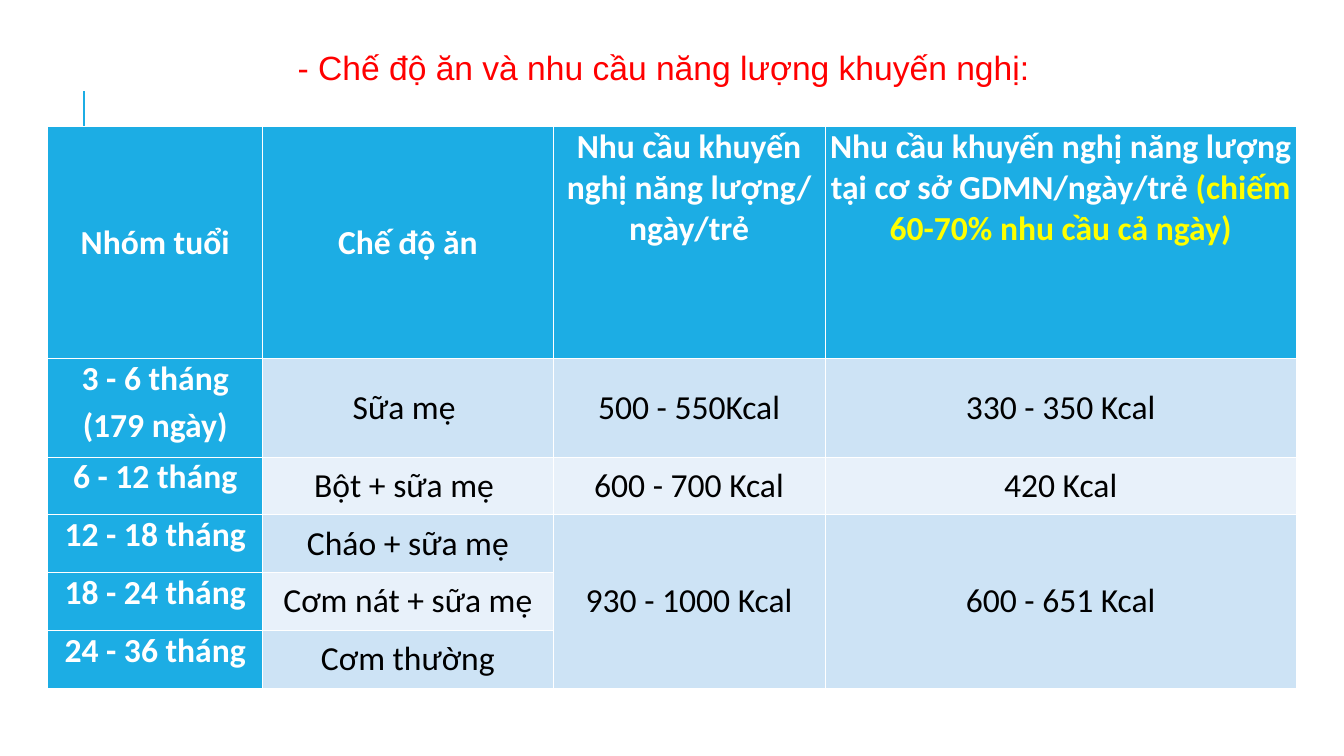
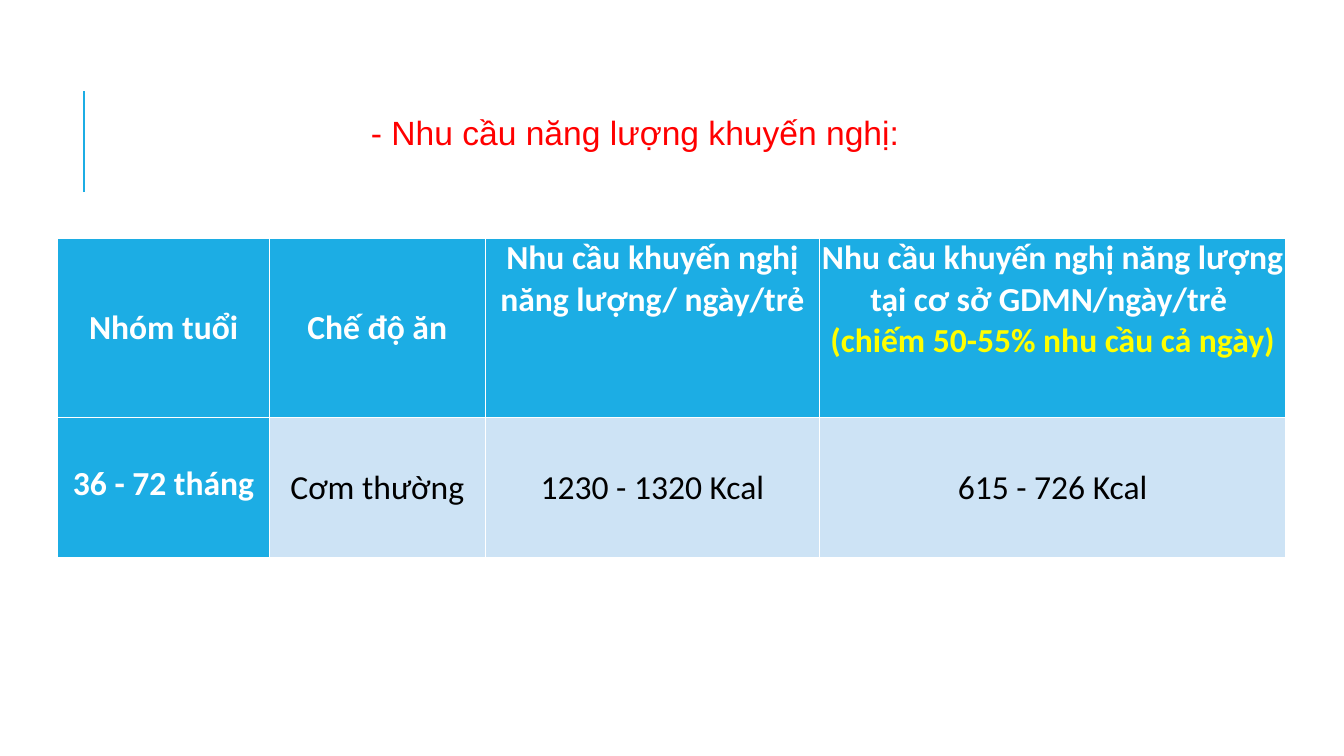
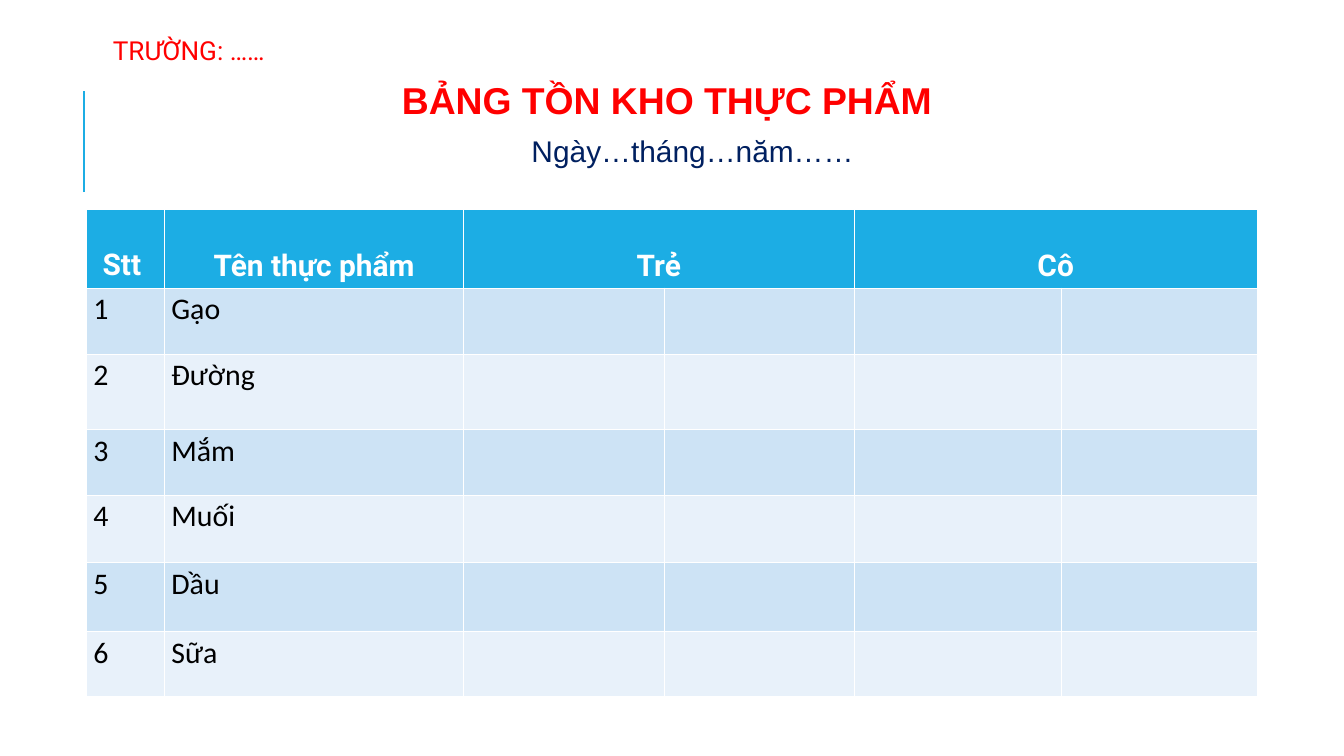
from pptx import Presentation, util as u
from pptx.dml.color import RGBColor
from pptx.enum import shapes, text
from lxml import etree

COLORS = {"blue": "1CADE4", "band": "CDE3F5", "pale": "E8F1FA", "white": "FFFFFF",
          "black": "000000", "red": "FF0000", "navy": "002060", "yellow": "FFFF00"}
GRID_COLUMNS, GRID_ROWS = 20, 11.25
CELL = u.Inches(1)
TITLE_ONLY = 5
A_NS = "http://schemas.openxmlformats.org/drawingml/2006/main"
TITLE_INDENT = 0.75
TOP, MIDDLE = text.MSO_ANCHOR.TOP, text.MSO_ANCHOR.MIDDLE
LEFT, CENTER, JUSTIFY = text.PP_ALIGN.LEFT, text.PP_ALIGN.CENTER, text.PP_ALIGN.JUSTIFY


def grid(*counts):
    return [round(count * CELL) for count in counts]


def color(name):
    return RGBColor.from_string(COLORS[name])


def set_font(font, name, size, tint, bold=False):
    font.name, font.size, font.bold = name, u.Pt(size), bold
    font.color.rgb = color(tint)


def add_accent_line(page):
    line = page.shapes.add_connector(shapes.MSO_CONNECTOR.STRAIGHT, *grid(1.25, 2.86, 1.25, 1.36))
    line.line.color.rgb = color("blue")
    line.line.width = u.Pt(1.5)
    etree.SubElement(line._element.spPr, f"{{{A_NS}}}effectLst")


def add_page(deck):
    page = deck.slides.add_slide(deck.slide_layouts[TITLE_ONLY])
    add_accent_line(page)
    return page


def add_title_line(para, words, font, size, tint, bold=False, align=JUSTIFY, indent=TITLE_INDENT):
    para.text = words
    para.alignment = align
    para.space_before = para.space_after = u.Pt(6)
    para._p.get_or_add_pPr().set("indent", str(grid(indent)[0]))
    set_font(para.font, font, size, tint, bold)


def place_title(page, spot, lines):
    title = page.shapes.title
    title.left, title.top, title.width, title.height = grid(*spot)
    frame = title.text_frame
    frame.word_wrap = True
    frame.vertical_anchor = TOP
    frame.auto_size = text.MSO_AUTO_SIZE.SHAPE_TO_FIT_TEXT
    for index, line in enumerate(lines):
        para = frame.add_paragraph() if index else frame.paragraphs[0]
        add_title_line(para, **line)


def add_table(page, left, top, widths, heights):
    table = page.shapes.add_table(len(heights), len(widths),
                                  *grid(left, top, sum(widths), sum(heights))).table
    for column, width in zip(table.columns, grid(*widths)):
        column.width = width
    for row, height in zip(table.rows, grid(*heights)):
        row.height = height
    return table


def paint_cells(table, blue_column):
    for row in range(len(table.rows)):
        for column in range(len(table.columns)):
            fill = table.cell(row, column).fill
            fill.solid()
            is_head = row == 0 or (blue_column and column == 0)
            fill.fore_color.rgb = color("blue" if is_head else "band" if row % 2 else "pale")


def write_cell(cell, words, font, size, head, align=CENTER, anchor=TOP, spacing=None):
    cell.vertical_anchor = anchor
    for index, line in enumerate(words.split("\n")):
        para = cell.text_frame.add_paragraph() if index else cell.text_frame.paragraphs[0]
        para.alignment = align
        if spacing:
            para.line_spacing = spacing
        set_font(para.font, font, size, "white" if head else "black", head)
        for part, piece in enumerate(line.split("*")):
            if piece:
                span = para.add_run()
                span.text = piece
                if part:
                    span.font.color.rgb = color("yellow")


def clear_margins(cell):
    cell.margin_left = cell.margin_top = cell.margin_right = cell.margin_bottom = 0


def add_energy_table(page, left, top, widths, heights, rows):
    table = add_table(page, left, top, widths, heights)
    paint_cells(table, blue_column=True)
    for row, entries in enumerate(rows):
        for column, words in enumerate(entries):
            cell = table.cell(row, column)
            clear_margins(cell)
            centred = column < 2 if row == 0 else column > 0
            write_cell(cell, words, "Calibri", 36, row == 0 or column == 0,
                       anchor=MIDDLE if centred else TOP)
    return table


def build_toddler_page(deck):
    page = add_page(deck)
    place_title(page, (3.58, 0.65, 14.08, 0.71), [
        dict(words="- Chế độ ăn và nhu cầu năng lượng khuyến nghị:", font="Arial", size=36, tint="red")])
    table = add_energy_table(page, 0.71, 1.88, [3.2, 4.32, 4.05, 7.01], [3.46, 1.46] + [0.86] * 4, [
        ["Nhóm tuổi", "Chế độ ăn", "Nhu cầu khuyến nghị năng lượng/ ngày/trẻ",
         "Nhu cầu khuyến nghị năng lượng tại cơ sở GDMN/ngày/trẻ *(chiếm 60-70% nhu cầu cả ngày)"],
        ["3 - 6 tháng\n(179 ngày)", "Sữa mẹ ", "500 - 550Kcal", "330 - 350 Kcal"],
        ["6 - 12 tháng", "Bột + sữa mẹ ", "600 - 700 Kcal", "420 Kcal"],
        ["12 - 18 tháng", "Cháo + sữa mẹ", "930 - 1000 Kcal", "600 - 651 Kcal"],
        ["18 - 24 tháng", "Cơm nát + sữa mẹ"],
        ["24 - 36 tháng", "Cơm thường"]])
    table.cell(1, 0).text_frame.paragraphs[0].space_after = u.Pt(6)
    for column in (2, 3):
        table.cell(3, column).merge(table.cell(5, column))


def build_preschool_page(deck):
    page = add_page(deck)
    place_title(page, (4.67, 1.62, 14.08, 0.71), [
        dict(words="- Nhu cầu năng lượng khuyến nghị:", font="Arial", size=36, tint="red")])
    table = add_energy_table(page, 0.86, 3.54, [3.15, 3.21, 4.98, 6.93], [2.67, 2.09], [
        ["Nhóm tuổi", "Chế độ ăn", "Nhu cầu khuyến nghị năng lượng/ ngày/trẻ",
         "Nhu cầu khuyến nghị năng lượng tại cơ sở GDMN/ngày/trẻ \n*(chiếm 50-55% nhu cầu cả ngày)"],
        ["36 - 72 tháng", "Cơm thường", "1230 - 1320 Kcal", "615 - 726 Kcal"]])
    table.cell(1, 0).margin_top = grid(0.69)[0]


def build_stock_page(deck):
    page = add_page(deck)
    place_title(page, (0.83, 0.46, 18.33, 2.12), [
        dict(words="TRƯỜNG: ……", font="Roboto", size=28, tint="red"),
        dict(words="BẢNG TỒN KHO THỰC PHẨM", font="Arial", size=40, tint="red", bold=True, indent=5.05),
        dict(words="Ngày…tháng…năm…… ", font="Arial", size=32, tint="navy", align=CENTER)])
    table = add_table(page, 1.29, 3.12, [1.16, 4.45, 2.98, 2.83, 3.08, 2.92],
                      [0.83, 0.98, 1.12, 0.98, 1, 1.03, 0.96])
    paint_cells(table, blue_column=False)
    for column, words in {0: "Stt ", 1: "Tên thực phẩm", 2: "Trẻ", 4: "Cô"}.items():
        cell = table.cell(0, column)
        if column:
            clear_margins(cell)
        write_cell(cell, words, "Roboto", 32, True, anchor=MIDDLE if column else TOP, spacing=2.0)
    for column in (2, 4):
        table.cell(0, column).merge(table.cell(0, column + 1))
    for number, food in enumerate(["Gạo", "Đường", "Mắm", "Muối", "Dầu", "Sữa"], 1):
        for column, words in enumerate([str(number), food]):
            write_cell(table.cell(number, column), words, "Calibri", 32, False, align=LEFT)


def main():
    deck = Presentation()
    deck.slide_width, deck.slide_height = grid(GRID_COLUMNS, GRID_ROWS)
    build_toddler_page(deck)
    build_preschool_page(deck)
    build_stock_page(deck)
    deck.save("out.pptx")


if __name__ == "__main__":
    main()
